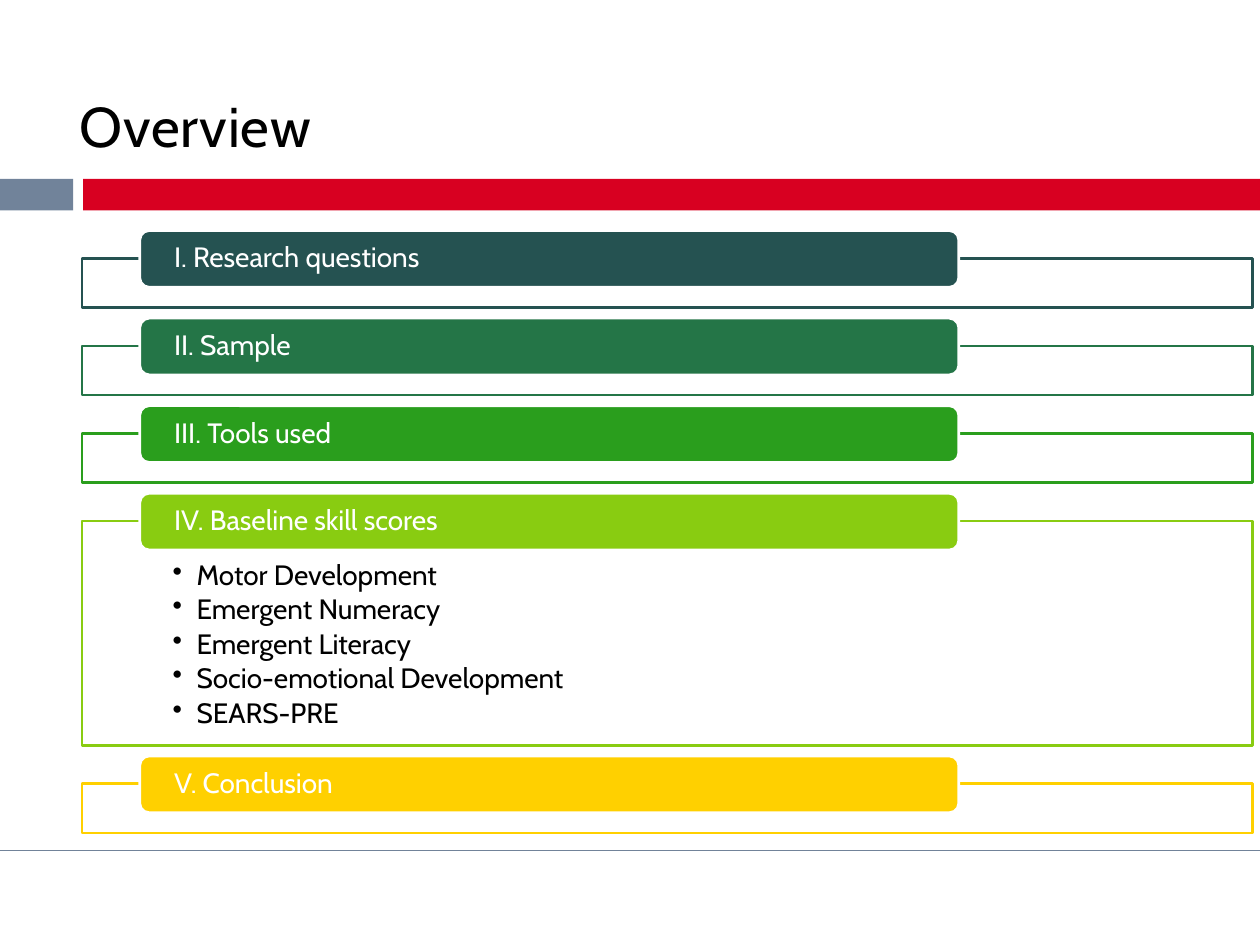
from dataclasses import dataclass
from typing import Any

from lxml.etree import SubElement
from pptx import Presentation
from pptx.dml.color import RGBColor
from pptx.enum.shapes import MSO_CONNECTOR, MSO_SHAPE
from pptx.enum.text import MSO_ANCHOR, MSO_AUTO_SIZE, PP_ALIGN
from pptx.oxml.ns import qn
from pptx.util import Inches, Pt

COLOURS = {
    "white": "FFFFFF", "black": "000000", "slate": "71839A", "rule": "718399",
    "red": "D80021", "teal": "255251", "forest": "247547", "green": "2A9E1D",
    "lime": "89CC11", "yellow": "FFD000",
}
SKILLS = [
    "Motor Development", "Emergent Numeracy", "Emergent Literacy",
    "Socio-emotional Development", "SEARS-PRE",
]
SECTIONS = [
    ("I. Research questions", "teal", []),
    ("II. Sample", "forest", []),
    ("III. Tools used", "green", []),
    ("IV. Baseline skill scores", "lime", SKILLS),
    ("V. Conclusion", "yellow", []),
]
FRAMES_TOP, FRAMES_BOTTOM = 2.05, 6.61
SHORT_FRAME, TALL_FRAME = 0.39, 1.78
TAB_RISE = 0.22


@dataclass
class Composer:
    """Holds the style and the current slide, and draws each kind of element."""

    page: Any
    font: str = "Cabin"
    size: int = 16
    line_width: float = 1.5

    def colour(self, name):
        return RGBColor.from_string(COLOURS[name])

    def apply(self, target, values):
        for name, value in values.items():
            setattr(target, name, value)

    def add_span(self, para, text, colour, size):
        span = para.add_run()
        span.text = text
        self.apply(span.font, {"name": self.font, "size": Pt(size)})
        span.font.color.rgb = self.colour(colour)
        return span

    def frame_text(self, box, anchor, left=0.1, top=0.05, right=0.1, bottom=0.05):
        self.apply(box.text_frame, {
            "word_wrap": True, "auto_size": MSO_AUTO_SIZE.NONE,
            "vertical_anchor": anchor,
            "margin_left": Inches(left), "margin_top": Inches(top),
            "margin_right": Inches(right), "margin_bottom": Inches(bottom),
        })

    def title(self, text, left, top, width, height):
        box = self.page.shapes.title
        self.apply(box, {
            "left": Inches(left), "top": Inches(top),
            "width": Inches(width), "height": Inches(height),
        })
        self.frame_text(box, MSO_ANCHOR.BOTTOM)
        para = box.text_frame.paragraphs[0]
        para.alignment = PP_ALIGN.LEFT
        span = self.add_span(para, text, "black", 32)
        span._r.get_or_add_rPr().set("spc", "50")

    def block(self, left, top, width, height, fill, line=None, kind=MSO_SHAPE.RECTANGLE):
        box = self.page.shapes.add_shape(
            kind, Inches(left), Inches(top), Inches(width), Inches(height))
        box.shadow.inherit = False
        box.fill.solid()
        box.fill.fore_color.rgb = self.colour(fill)
        if line:
            box.line.color.rgb = self.colour(line)
            box.line.width = Pt(self.line_width)
        else:
            box.line.fill.background()
        return box

    def rule(self, top, width, colour):
        line = self.page.shapes.add_connector(
            MSO_CONNECTOR.STRAIGHT, 0, Inches(top), Inches(width), Inches(top))
        line.line.color.rgb = self.colour(colour)
        line.line.width = Pt(1)
        SubElement(line._element.spPr, qn("a:effectLst"))

    def tab(self, text, top, colour):
        box = self.block(1.11, top, 6.5, 0.45, colour, "white", MSO_SHAPE.ROUNDED_RECTANGLE)
        self.frame_text(box, MSO_ANCHOR.MIDDLE, 0.25, 0, 0.25, 0)
        para = box.text_frame.paragraphs[0]
        self.apply(para, {"alignment": PP_ALIGN.LEFT, "line_spacing": 0.9})
        self.add_span(para, text, "white", self.size)

    def bullets(self, box, items):
        self.frame_text(box, MSO_ANCHOR.TOP, 0.72, 0.32, 0.72, 0.12)
        frame = box.text_frame
        for index, item in enumerate(items):
            para = frame.add_paragraph() if index else frame.paragraphs[0]
            properties = para._p.get_or_add_pPr()
            properties.set("marL", str(Inches(0.19)))
            properties.set("indent", str(-Inches(0.19)))
            SubElement(properties, qn("a:buChar"), char="•")
            self.apply(para, {
                "alignment": PP_ALIGN.LEFT, "line_spacing": 0.9, "space_after": Pt(2.4),
            })
            self.add_span(para, item, "black", self.size)

    def sections(self, sections):
        heights = [TALL_FRAME if items else SHORT_FRAME for _, _, items in sections]
        gap = (FRAMES_BOTTOM - FRAMES_TOP - sum(heights)) / (len(sections) - 1)
        top = FRAMES_TOP
        for (heading, colour, items), height in zip(sections, heights):
            box = self.block(0.65, top, 9.29, height, "white", colour)
            if items:
                self.bullets(box, items)
            self.tab(heading, top - TAB_RISE, colour)
            top += height + gap


def main():
    deck = Presentation()
    deck.slide_width, deck.slide_height = Inches(10), Inches(7.5)
    composer = Composer(deck.slides.add_slide(deck.slide_layouts[5]))
    composer.block(0, 1.42, 0.58, 0.25, "slate")
    composer.block(0.66, 1.42, 9.34, 0.25, "red")
    composer.rule(6.75, 10, "rule")
    composer.title("Overview", 0.53, 0.41, 8.83, 0.9)
    composer.sections(SECTIONS)
    deck.save("out.pptx")


if __name__ == "__main__":
    main()
